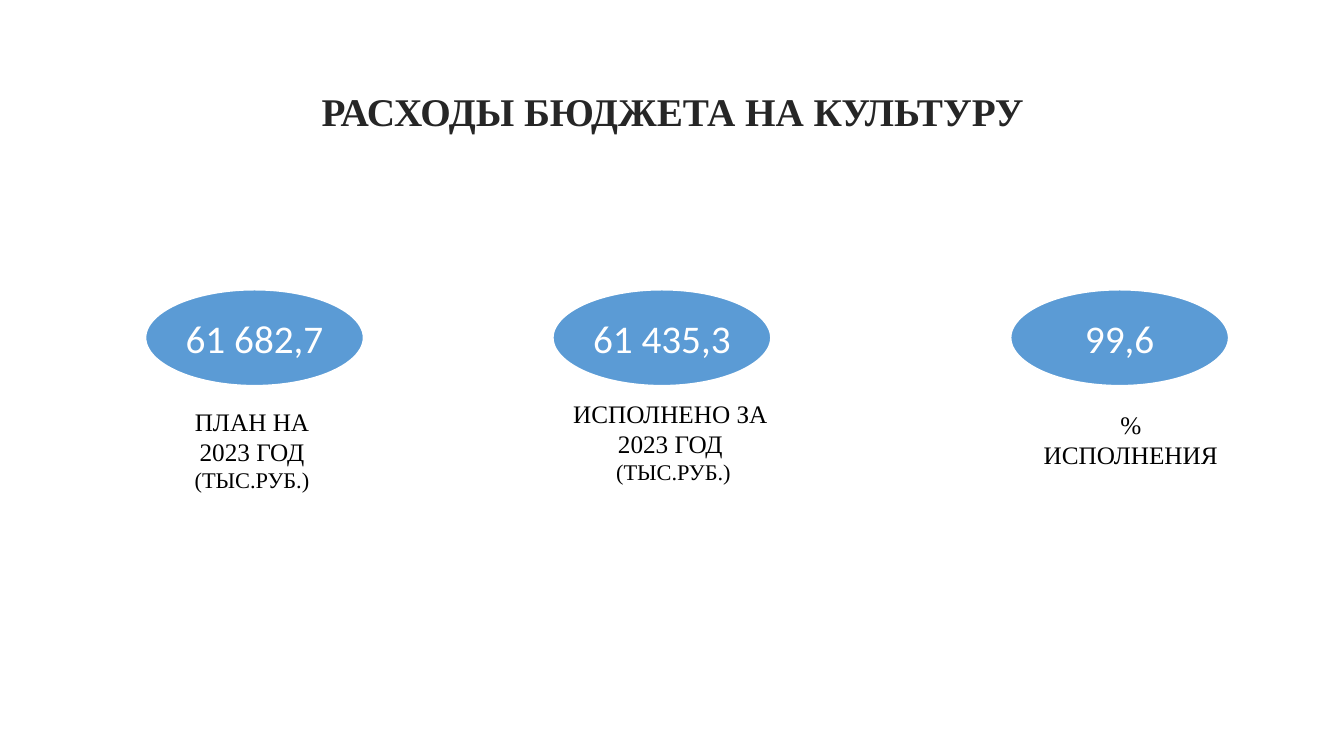
from pptx import Presentation
from pptx.dml.color import RGBColor
from pptx.enum.shapes import MSO_SHAPE as Shape
from pptx.enum.text import MSO_ANCHOR as Anchor, MSO_AUTO_SIZE as AutoSize, PP_ALIGN as Align
from pptx.util import Inches, Pt

BLUE = RGBColor(0x5B, 0x9B, 0xD5)
WHITE = RGBColor(0xFF, 0xFF, 0xFF)
BLACK = RGBColor(0, 0, 0)
DARK = RGBColor(0x26, 0x26, 0x26)
SERIF, SANS = "Times New Roman", "Calibri"

OVAL_TOP, OVAL_WIDTH, OVAL_HEIGHT = 2.84, 2.23, 1.02
INDICATORS = [
    (1.41, "61 682,7", (1.65, 3.98, 1.7, 1.01),
     [[("ПЛАН НА 2023 ГОД ", 18), ("(ТЫС.РУБ.)", 16)]]),
    (5.45, "61 435,3", (5.56, 3.9, 2.24, 0.98),
     [[("ИСПОЛНЕНО ЗА ", 18)], [("2023 ГОД ", 18)], [("(ТЫС.РУБ.)", 16)]]),
    (9.99, "99,6", (10.22, 4.01, 1.99, 0.71), [[("% ИСПОЛНЕНИЯ", 18)]]),
]


def add_span(para, text, size, font, color, bold=False):
    """Add one formatted run to a centred paragraph."""
    para.alignment = Align.CENTER
    span = para.add_run()
    span.text = text
    span.font.size = Pt(size)
    span.font.name = font
    span.font.bold = bold
    span.font.color.rgb = color


def add_title(page, box, text):
    """Place the slide heading in the title placeholder."""
    title = page.shapes.title
    title.left, title.top, title.width, title.height = map(Inches, box)
    title.text_frame.vertical_anchor = Anchor.MIDDLE
    para = title.text_frame.paragraphs[0]
    para.line_spacing = 0.9
    add_span(para, text, 28, SERIF, DARK, bold=True)


def add_value(page, box, text):
    """Draw an oval that carries a figure."""
    oval = page.shapes.add_shape(Shape.OVAL, *map(Inches, box))
    oval.shadow.inherit = False
    oval.fill.solid()
    oval.fill.fore_color.rgb = BLUE
    oval.line.color.rgb = WHITE
    oval.line.width = Pt(6)
    oval.text_frame.vertical_anchor = Anchor.MIDDLE
    add_span(oval.text_frame.paragraphs[0], text, 28, SANS, WHITE)


def add_caption(page, box, lines):
    """Write the caption that explains a figure."""
    frame = page.shapes.add_textbox(*map(Inches, box)).text_frame
    frame.word_wrap = True
    frame.auto_size = AutoSize.SHAPE_TO_FIT_TEXT
    for index, line in enumerate(lines):
        para = frame.add_paragraph() if index else frame.paragraphs[0]
        for text, size in line:
            add_span(para, text, size, SERIF, BLACK)


def main():
    """Build the culture budget slide and save the deck."""
    deck = Presentation()
    deck.slide_width, deck.slide_height = Inches(13.33), Inches(7.5)
    page = deck.slides.add_slide(deck.slide_layouts[5])
    add_title(page, (0.92, 0.4, 11.5, 1.45), "РАСХОДЫ БЮДЖЕТА НА КУЛЬТУРУ")
    for left, value, caption_box, lines in INDICATORS:
        add_value(page, (left, OVAL_TOP, OVAL_WIDTH, OVAL_HEIGHT), value)
        add_caption(page, caption_box, lines)
    deck.save("out.pptx")


if __name__ == "__main__":
    main()
